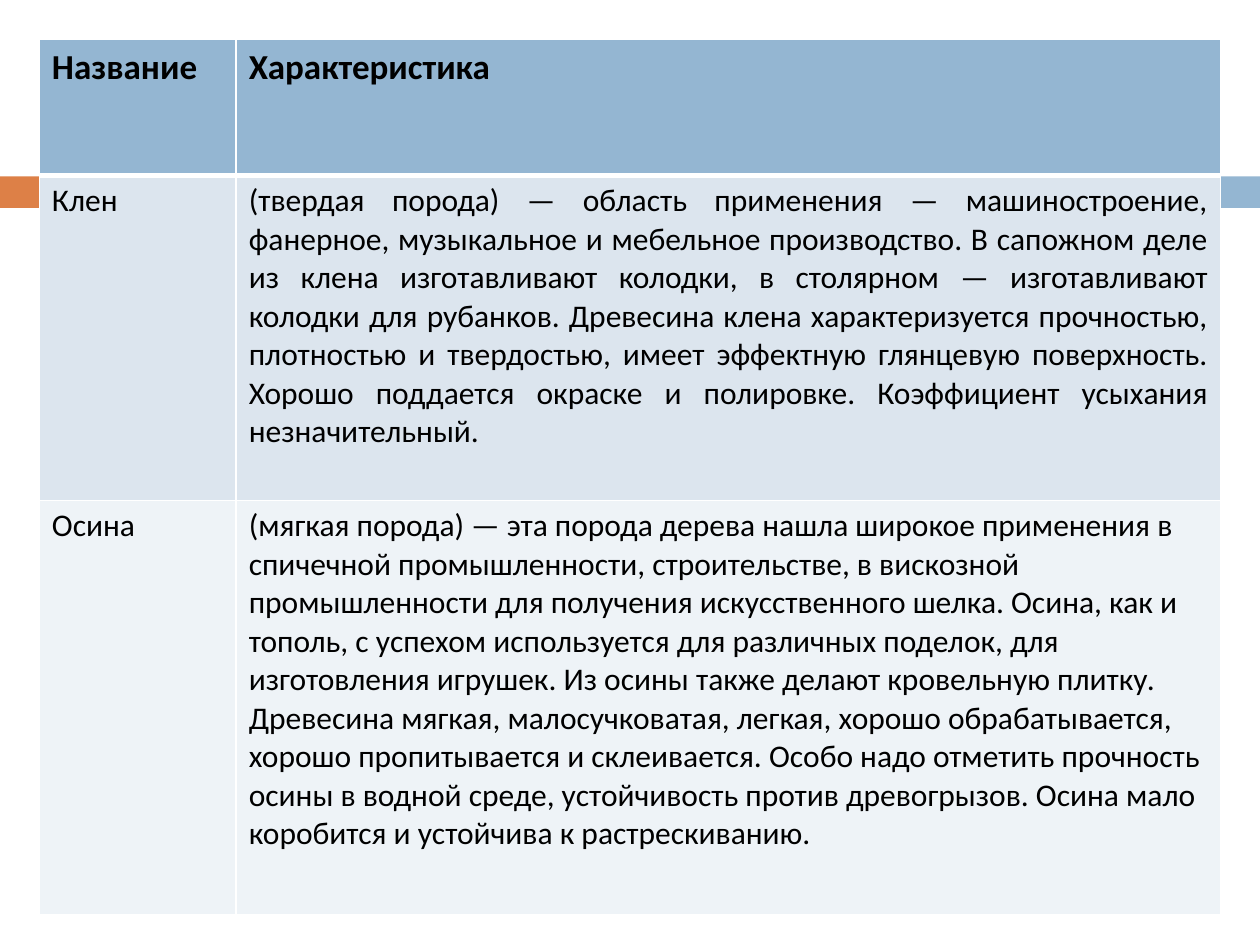
from lxml import etree
from pptx import Presentation
from pptx.dml.color import RGBColor
from pptx.enum.shapes import MSO_SHAPE
from pptx.enum.text import PP_ALIGN
from pptx.oxml.ns import qn
from pptx.util import Pt

RECT = MSO_SHAPE.RECTANGLE
LEFT, JUSTIFY = PP_ALIGN.LEFT, PP_ALIGN.JUSTIFY
FONT = "Calibri"
COLORS = {
    "orange": "DD8047",
    "blue": "94B6D2",
    "band_dark": "DCE5EE",
    "band_light": "EEF3F7",
    "border": "FFFFFF",
    "text": "000000",
}
COL_WIDTHS = [112.5, 562.5]
ROW_HEIGHTS = [77.8, 185.8, 236.8]
ROW_FILLS = ["blue", "band_dark", "band_light"]
ROWS = [
    ("Название", "Характеристика"),
    ("Клен",
     "(твердая порода) — область применения — машиностроение, фанерное, "
     "музыкальное и мебельное производство. В сапожном деле из клена "
     "изготавливают колодки, в столярном — изготавливают колодки для "
     "рубанков. Древесина клена характеризуется прочностью, плотностью и "
     "твердостью, имеет эффектную глянцевую поверхность. Хорошо поддается "
     "окраске и полировке. Коэффициент усыхания незначительный."),
    ("Осина",
     "(мягкая порода) — эта порода дерева нашла широкое применения в "
     "спичечной промышленности, строительстве, в вискозной промышленности "
     "для получения искусственного шелка. Осина, как и тополь, с успехом "
     "используется для различных поделок, для изготовления игрушек. Из "
     "осины также делают кровельную плитку. Древесина мягкая, "
     "малосучковатая, легкая, хорошо обрабатывается, хорошо пропитывается "
     "и склеивается. Особо надо отметить прочность осины в водной среде, "
     "устойчивость против древогрызов. Осина мало коробится и устойчива к "
     "растрескиванию."),
]


def rgb(name):
    return RGBColor.from_string(COLORS[name])


def add_bar(s, left, width, color):
    sp = s.shapes.add_shape(RECT, Pt(left), Pt(100.8), Pt(width), Pt(18))
    sp.shadow.inherit = False
    sp.fill.solid()
    sp.fill.fore_color.rgb = rgb(color)
    sp.line.fill.background()


def set_borders(cell, top, bottom):
    tc_pr = cell._tc.get_or_add_tcPr()
    widths = {"a:lnL": 1, "a:lnR": 1, "a:lnT": top, "a:lnB": bottom}
    for i, (tag, width) in enumerate(widths.items()):
        ln = etree.Element(qn(tag), w=str(Pt(width)))
        fill = etree.SubElement(ln, qn("a:solidFill"))
        etree.SubElement(fill, qn("a:srgbClr"), val=COLORS["border"])
        tc_pr.insert(i, ln)


def fill_cell(cell, text, color, header, align):
    cell.fill.solid()
    cell.fill.fore_color.rgb = rgb(color)
    p = cell.text_frame.paragraphs[0]
    p.text = text
    p.alignment = align
    p.font.name = FONT
    p.font.size = Pt(20 if header else 18)
    p.font.bold = header
    p.font.color.rgb = rgb("text")


def add_wood_table(s):
    table = s.shapes.add_table(
        len(ROWS), len(COL_WIDTHS), Pt(22.5), Pt(22.5),
        Pt(sum(COL_WIDTHS)), Pt(sum(ROW_HEIGHTS))).table
    for col, width in zip(table.columns, COL_WIDTHS):
        col.width = Pt(width)
    for r, texts in enumerate(ROWS):
        table.rows[r].height = Pt(ROW_HEIGHTS[r])
        for c, text in enumerate(texts):
            cell = table.cell(r, c)
            align = JUSTIFY if (r, c) == (1, 1) else LEFT
            fill_cell(cell, text, ROW_FILLS[r], r == 0, align)
            set_borders(cell, 3 if r == 1 else 1, 3 if r == 0 else 1)


def main():
    prs = Presentation()
    prs.slide_width, prs.slide_height = Pt(720), Pt(540)
    s = prs.slides.add_slide(prs.slide_layouts[6])
    add_bar(s, 0, 42, "orange")
    add_bar(s, 46.8, 673.2, "blue")
    add_wood_table(s)
    prs.save("out.pptx")


if __name__ == "__main__":
    main()
